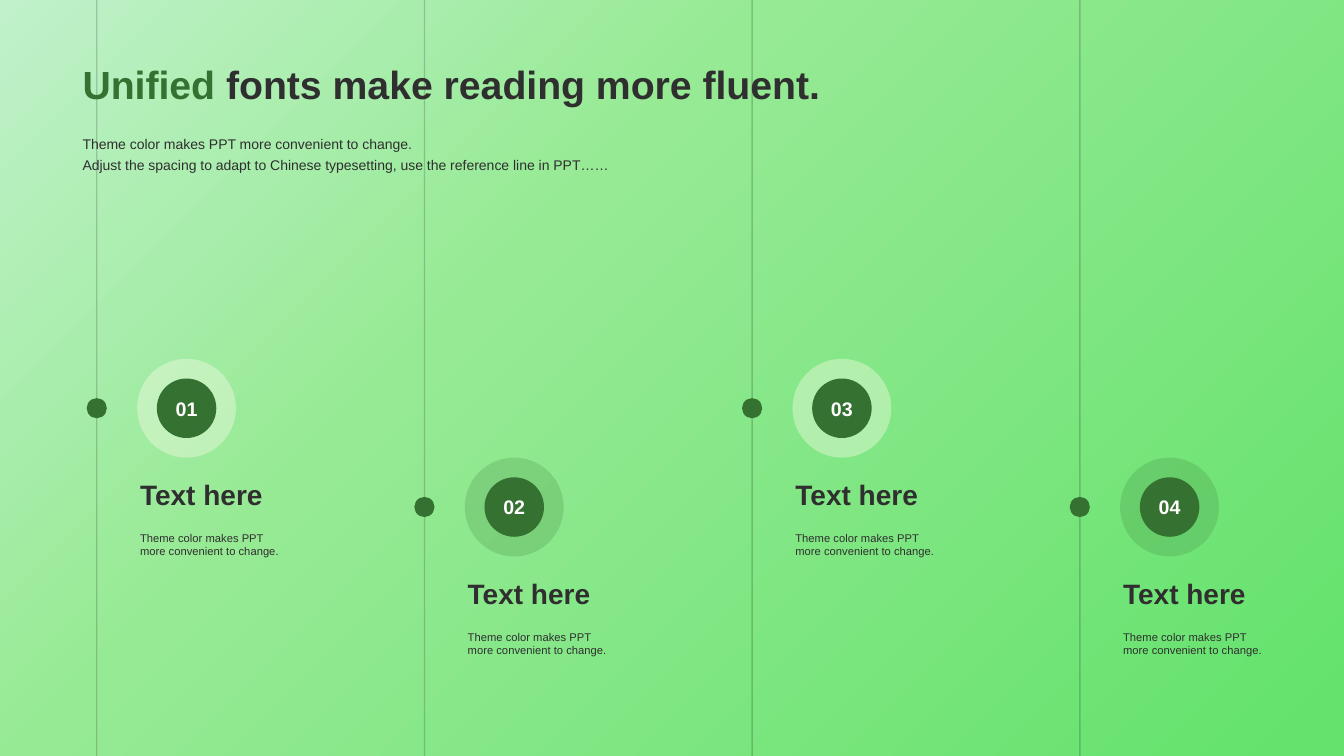
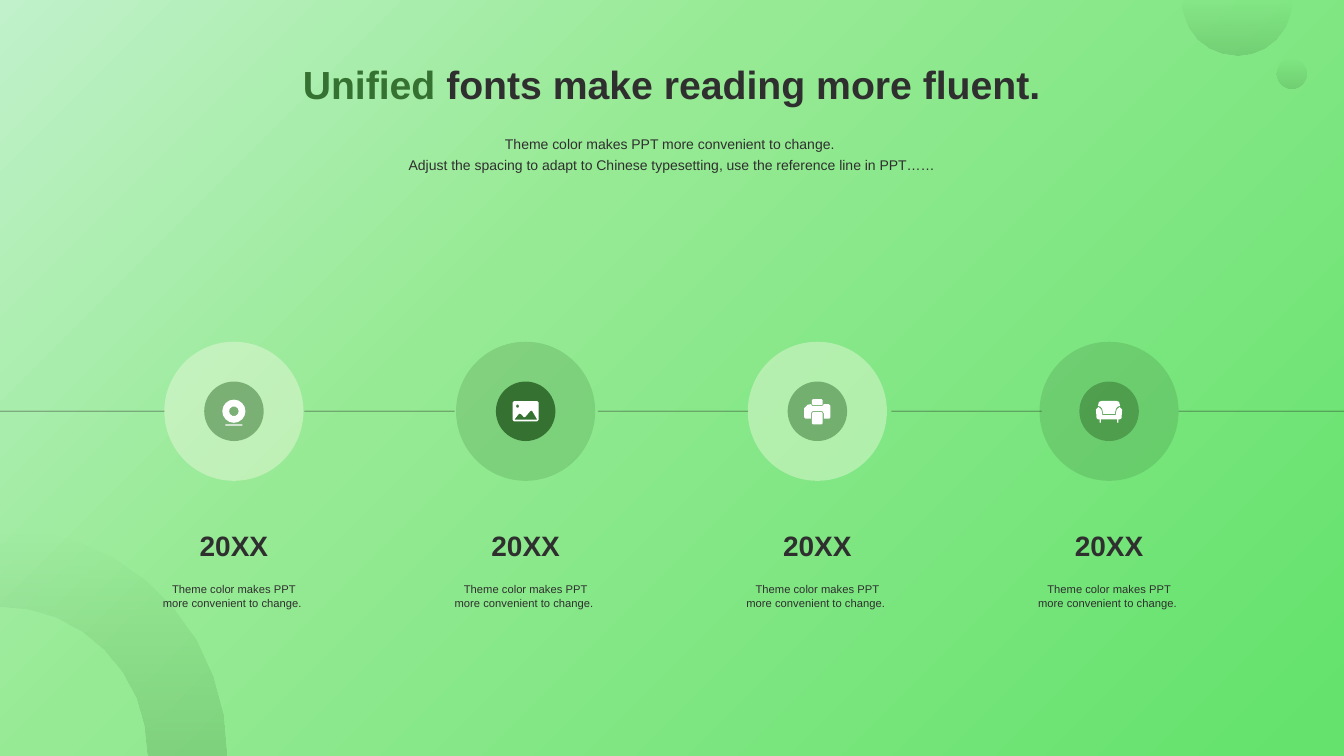
from math import cos, radians, sin

from lxml import etree
from pptx import Presentation
from pptx.dml.color import RGBColor
from pptx.enum.shapes import MSO_CONNECTOR, MSO_SHAPE
from pptx.enum.text import MSO_ANCHOR as Anchor, MSO_AUTO_SIZE as AutoSize, PP_ALIGN as Align
from pptx.oxml.ns import qn
from pptx.util import Inches, Pt

WIDTH, HEIGHT = 13.33, 7.5
FONT = "Arial"
GREEN = RGBColor(0x35, 0x71, 0x31)
CREAM = RGBColor(0xFA, 0xFB, 0xE8)
INK = RGBColor(0x2F, 0x2F, 0x2F)
LINE = RGBColor(0x18, 0x18, 0x18)
WHITE = RGBColor(0xFF, 0xFF, 0xFF)
BACKDROP = [(0, RGBColor(0xC0, 0xF1, 0xCA), 100),
            (37, RGBColor(0x96, 0xEA, 0x94), 100),
            (98, RGBColor(0x64, 0xE2, 0x6D), 100)]
FADE = [(0, GREEN, 0), (100, GREEN, 20)]
HALOS = [(CREAM, 40), (GREEN, 20)]  # alternate from column to column

MARGIN, CONTENT_WIDTH = 0.72, 11.88
CORE = 0.59
CAPTION_WIDTH, CAPTION_HEIGHT, CAPTION_STEP = 1.69, 0.44, 0.54
TITLE = [("Unified ", GREEN), ("fonts make reading more fluent.", INK)]
BODY = "Theme color makes PPT more convenient to change."
SPACED_BODY = BODY + " "
SPACING_TIP = ("Adjust the spacing to adapt to Chinese typesetting, "
               "use the reference line in PPT……")


def columns(first, last, count=4):
    return [first + i * (last - first) / (count - 1) for i in range(count)]


# Outlines are lists of points; one unit is a thousandth of an inch.
def arc(cx, cy, r, start, end, steps):
    angles = [radians(a) for a in columns(start, end, steps + 1)]
    return [(cx + r * cos(a), cy + r * sin(a)) for a in angles]


def circle(cx, cy, r, sides):
    return arc(cx, cy, r, 0, 360, sides)[:-1]


def rounded(left, top, right, bottom, r):
    """Give a rectangle with its corners cut by r."""
    return [(left + r, top), (right - r, top), (right, top + r), (right, bottom - r),
            (right - r, bottom), (left + r, bottom), (left, bottom - r), (left, top + r)]


def mirrored(half):
    """Complete an outline that is symmetric about x = 0."""
    return half + [(-x, y) for x, y in reversed(half)]


WEBCAM = [circle(0, 0, 115, 16), circle(0, 0, 48, 10),
          [(-85, 130), (85, 130), (85, 144), (-85, 144)]]
LANDSCAPE = [rounded(-130, -100, 130, 100, 15), circle(-80, -50, 16, 6),
             [(-112, 84), (-70, 30), (-58, 24), (-45, 30), (-18, 58), (-4, 58),
              (45, 0), (56, -6), (67, 0), (116, 84)]]
PRINTER = [rounded(-53, 10, 53, 130, 10), rounded(-53, -120, 53, -60, 10),
           [(-64, -70), (-48, -50), (48, -50), (64, -70), (115, -70), (130, -55),
            (130, 60), (118, 74), (64, 74), (64, 20), (50, 0), (-50, 0), (-64, 20),
            (-64, 74), (-118, 74), (-130, 60), (-130, -30), (-95, -65)]]
SOFA = [mirrored([(65, 40), (76, -18), (105, -42), (130, -18), (124, 68), (110, 80),
                  (94, 80), (94, 112), (80, 112), (80, 80)]),
        mirrored([(75, -102), (100, -92), (110, -53), (85, -45), (68, -24), (58, 28)])]


def set_alpha(element, percent):
    """Make the first plain colour under element partly transparent."""
    color = next(element.iter(qn("a:srgbClr")))
    etree.SubElement(color, qn("a:alpha")).set("val", str(percent * 1000))


def set_gradient(fill, element, stops, angle):
    """Give fill, which is stored under element, the (position, colour, alpha) stops."""
    fill.gradient()
    gradient = next(element.iter(qn("a:gradFill")))
    gradient.find(qn("a:lin")).set("ang", str(angle * 60000))
    stop_list = gradient.find(qn("a:gsLst"))
    for old in list(stop_list):
        stop_list.remove(old)
    for position, rgb, alpha in stops:
        stop = etree.SubElement(stop_list, qn("a:gs"), pos=str(position * 1000))
        etree.SubElement(stop, qn("a:srgbClr"), val=str(rgb))
        set_alpha(stop, alpha)


def paint(sp, rgb, alpha=100):
    sp.shadow.inherit = False
    sp.line.fill.background()
    sp.fill.solid()
    sp.fill.fore_color.rgb = rgb
    if alpha < 100:
        set_alpha(sp._element.spPr, alpha)


def paint_fade(sp):
    paint(sp, GREEN)
    set_gradient(sp.fill, sp._element.spPr, FADE, 90)


def style(r, size, rgb, bold=False):
    r.font.name, r.font.size, r.font.bold = FONT, Pt(size), bold
    r.font.color.rgb = rgb


def disc(s, cx, cy, diameter, rgb=GREEN, alpha=100):
    sp = s.shapes.add_shape(MSO_SHAPE.OVAL, Inches(cx - diameter / 2),
                            Inches(cy - diameter / 2), Inches(diameter), Inches(diameter))
    paint(sp, rgb, alpha)
    return sp


def outline(s, cx, cy, contours):
    """Draw contours as one shape around (cx, cy); inner contours are holes."""
    builder = s.shapes.build_freeform(*contours[0][0], scale=Inches(1) / 1000)
    for i, contour in enumerate(contours):
        if i:
            builder.move_to(*contour[0])
        builder.add_line_segments(contour[1:], close=True)
    sp = builder.convert_to_shape(Inches(cx), Inches(cy))
    paint(sp, WHITE)
    return sp


def rule(s, x1, y1, x2, y2, alpha):
    line = s.shapes.add_connector(MSO_CONNECTOR.STRAIGHT, Inches(x1), Inches(y1),
                                  Inches(x2), Inches(y2))
    line.line.color.rgb = LINE
    line.line.width = Pt(1)
    set_alpha(line._element.spPr, alpha)
    etree.SubElement(line._element.spPr, qn("a:effectLst"))


def text_box(s, left, top, width, height, paragraphs, size, align,
             bold=False, anchor=Anchor.TOP, spacing=None, grow=False):
    """Add paragraphs, each a list of (text, colour) runs."""
    tf = s.shapes.add_textbox(Inches(left), Inches(top), Inches(width),
                              Inches(height)).text_frame
    tf.word_wrap, tf.vertical_anchor = True, anchor
    tf.auto_size = AutoSize.SHAPE_TO_FIT_TEXT if grow else AutoSize.NONE
    for i, runs in enumerate(paragraphs):
        p = tf.add_paragraph() if i else tf.paragraphs[0]
        p.alignment, p.line_spacing = align, spacing
        for text, rgb in runs:
            r = p.add_run()
            r.text = text
            style(r, size, rgb, bold)


def caption(s, left, top, heading, body, align):
    text_box(s, left, top, CAPTION_WIDTH, CAPTION_HEIGHT, [[(heading, INK)]], 20, align,
             bold=True, anchor=Anchor.BOTTOM, grow=True)
    text_box(s, left, top + CAPTION_STEP, CAPTION_WIDTH, CAPTION_HEIGHT,
             [[(body, INK)]], 8, align)


def header(s, body, align):
    text_box(s, MARGIN, 1.24, CONTENT_WIDTH, 0.52,
             [[(body, INK)], [(SPACING_TIP, INK)]], 10, align, spacing=1.3, grow=True)
    text_box(s, MARGIN, 0, CONTENT_WIDTH, 1.12, [TITLE], 28, align,
             bold=True, anchor=Anchor.BOTTOM, spacing=0.9)


def new_slide(prs):
    s = prs.slides.add_slide(prs.slide_layouts[6])
    set_gradient(s.background.fill, s._element, BACKDROP, 45)
    return s


def numbered_slide(prs):
    s = new_slide(prs)
    halo = 0.98
    for i, x in enumerate(columns(0.96, 10.71)):
        cx, cy = x + 0.89, 4.05 + i % 2 * halo
        rule(s, x, 0, x, HEIGHT, 20)
        disc(s, cx, cy, halo, *HALOS[i % 2])
        badge = disc(s, cx, cy, CORE)
        tf = badge.text_frame
        tf.text, tf.word_wrap, tf.vertical_anchor = f"{i + 1:02}", False, Anchor.MIDDLE
        tf.paragraphs[0].alignment = Align.CENTER
        style(tf.paragraphs[0].runs[0], 14, WHITE, bold=True)
        caption(s, x + 0.33, cy + 0.63, "Text here", BODY, Align.LEFT)
        disc(s, x, cy, 0.2)
    header(s, BODY, Align.LEFT)


def corner_ornaments(s):
    ring = ([(0, 0 - 1480)] + arc(0, -20, 2250, 270, 360, 9) + [(2250, 0), (1470, 0)]
            + arc(0, -20, 1460, 360, 270, 8)[:-1])
    paint_fade(outline(s, 0, HEIGHT, [ring]))
    paint_fade(outline(s, 12.27, 0, [arc(0, 0, 550, 0, 180, 12)]))
    paint_fade(disc(s, 12.81, 0.73, 0.3))


def yearly_slide(prs):
    s = new_slide(prs)
    corner_ornaments(s)
    cy, halo, link = 4.08, 1.38, 1.49
    centers = columns(2.32, 11)
    icons = [WEBCAM, LANDSCAPE, PRINTER, SOFA]
    for i, (cx, icon) in enumerate(zip(centers, icons)):
        disc(s, cx, cy, halo, *HALOS[i % 2])
        disc(s, cx, cy, CORE, GREEN, 100 if icon is LANDSCAPE else 50)
        outline(s, cx, cy, icon)
        caption(s, cx - CAPTION_WIDTH / 2, cy + 1.11, "20XX", SPACED_BODY, Align.CENTER)
    for x in columns(3.02, 8.84, 3):
        rule(s, x, cy, x + link, cy, 30)
    rule(s, centers[-1] + halo / 2, cy, WIDTH, cy, 30)
    rule(s, 0, cy, centers[0] - halo / 2, cy, 30)
    header(s, SPACED_BODY, Align.CENTER)


def main():
    prs = Presentation()
    prs.slide_width, prs.slide_height = Inches(WIDTH), Inches(HEIGHT)
    numbered_slide(prs)
    yearly_slide(prs)
    prs.save("out.pptx")


if __name__ == "__main__":
    main()
